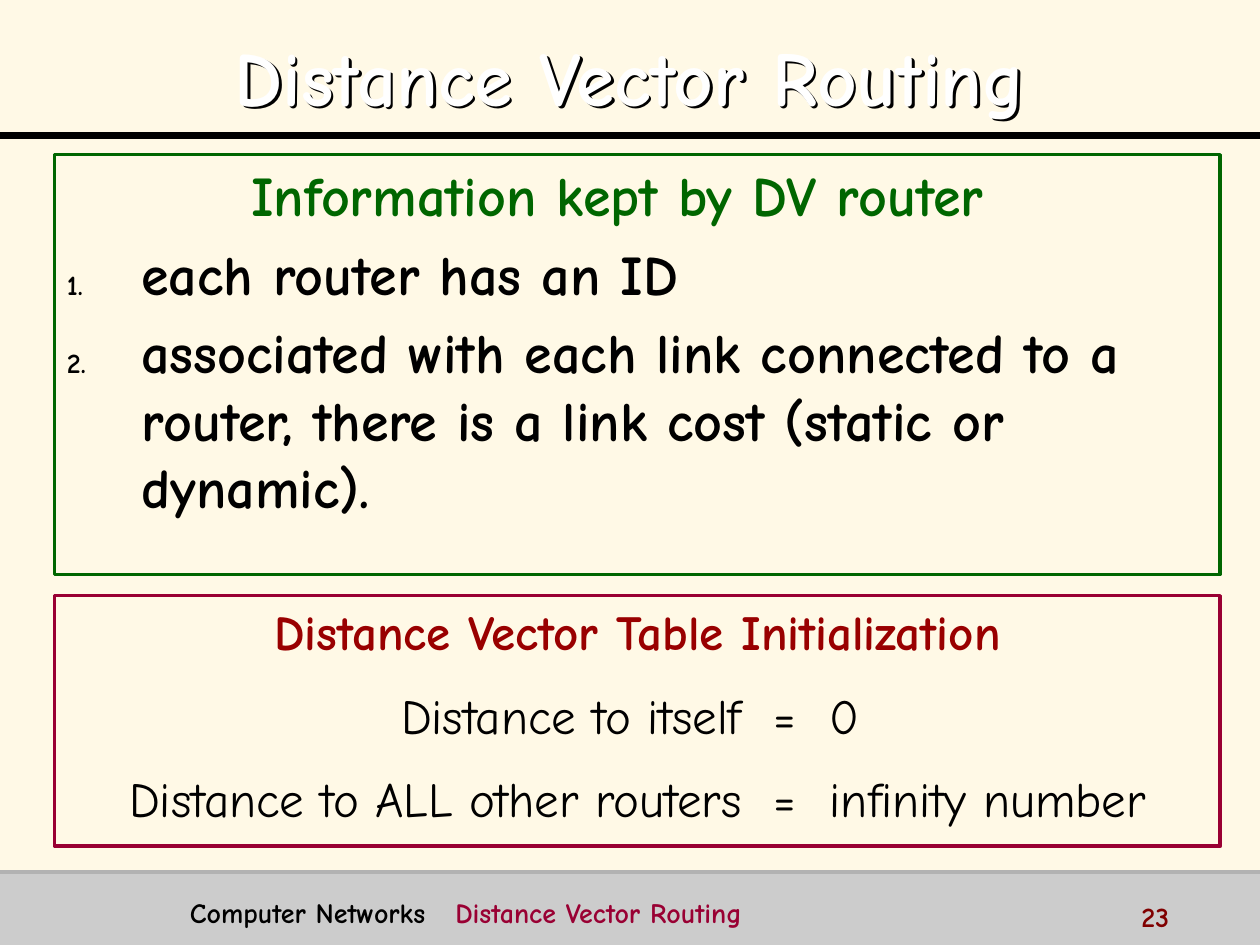
from lxml.etree import SubElement
from pptx import Presentation
from pptx.dml.color import RGBColor
from pptx.enum.shapes import MSO_CONNECTOR as Connector, MSO_SHAPE as Shape
from pptx.enum.text import MSO_ANCHOR as Anchor, PP_ALIGN as Align
from pptx.oxml.ns import qn
from pptx.util import Cm, Pt

FONT = "Comic Neue"
CREAM = RGBColor(0xFF, 0xF9, 0xE6)
WHITE = RGBColor(0xFF, 0xFF, 0xFF)
BLACK = RGBColor(0, 0, 0)
LIGHT_GREY = RGBColor(0xCC, 0xCC, 0xCC)
GREY = RGBColor(0xB2, 0xB2, 0xB2)
GREEN = RGBColor(0, 0x66, 0)
CRIMSON = RGBColor(0x99, 0, 0x33)
RED = RGBColor(0x99, 0, 0)
MAROON = RGBColor(0x80, 0, 0)

PAGE_WIDTH, PAGE_HEIGHT = Cm(25.4), Cm(19.05)
FOOTER_TOP = Cm(17.58)
PANEL_LEFT, PANEL_WIDTH = Cm(1.1), Cm(23.5)
INDENT = Cm(1.5)


def add_rule(page, top, color, width):
    rule = page.shapes.add_connector(Connector.STRAIGHT, 0, top, PAGE_WIDTH, top)
    rule.line.color.rgb = color
    rule.line.width = Pt(width)
    SubElement(rule._element.spPr, qn("a:effectLst"))


def add_rectangle(page, left, top, width, height, fill=None, outline=None):
    box = page.shapes.add_shape(Shape.RECTANGLE, left, top, width, height)
    box.shadow.inherit = False
    if fill is None:
        box.fill.background()
    else:
        box.fill.solid()
        box.fill.fore_color.rgb = fill
    if outline is None:
        box.line.fill.background()
    else:
        box.line.color.rgb = outline
        box.line.width = Pt(2)
    box.text_frame.word_wrap = True
    box.text_frame.vertical_anchor = Anchor.TOP
    return box


def add_text_box(page, left, top, width, height):
    box = page.shapes.add_textbox(left, top, width, height)
    box.text_frame.word_wrap = True
    return box


def set_tabs(para, stops):
    tab_list = SubElement(para._p.get_or_add_pPr(), qn("a:tabLst"))
    for position, align in stops:
        SubElement(tab_list, qn("a:tab"), pos=str(position), algn=align)


def set_number(para):
    properties = para._p.get_or_add_pPr()
    properties.set("marL", str(INDENT))
    properties.set("indent", str(-INDENT))
    color = SubElement(properties, qn("a:buClr"))
    SubElement(color, qn("a:srgbClr"), val=str(BLACK))
    SubElement(properties, qn("a:buSzPct"), val="50000")
    SubElement(properties, qn("a:buFont"), typeface=FONT)
    SubElement(properties, qn("a:buAutoNum"), type="arabicPeriod")


def set_font(para, size, color, bold=True):
    para.font.name = FONT
    para.font.size = Pt(size)
    para.font.bold = bold
    para.font.color.rgb = color


def write_first(box, text, size, color, align=Align.LEFT):
    para = box.text_frame.paragraphs[0]
    para.text = text
    para.alignment = align
    set_font(para, size, color)
    return para


def add_title(page):
    # Black shadow text, then the white title over it
    for offset, color in ((Cm(0.05), BLACK), (0, WHITE)):
        box = add_text_box(page, Cm(0.5) + offset, Cm(0.33) + offset, Cm(24.4), Cm(2.2))
        box.text_frame.vertical_anchor = Anchor.MIDDLE
        para = write_first(box, "Distance Vector Routing", 44, color, Align.CENTER)
        para.line_spacing = 1.1


def add_information_panel(page):
    box = add_rectangle(page, PANEL_LEFT, Cm(3.12), PANEL_WIDTH, Cm(8.46), outline=GREEN)
    heading = write_first(box, "Information kept by DV router", 32, GREEN, Align.CENTER)
    heading._p.get_or_add_pPr().set("marR", str(Cm(0.8)))
    for text in (
        "each router has an ID",
        "associated with each link connected to a router, "
        "there is a link cost (static or dynamic).",
    ):
        para = box.text_frame.add_paragraph()
        para.text = text
        para.alignment = Align.LEFT
        set_number(para)
        para.space_before = Pt(6.4)
        set_font(para, 32, BLACK)


def add_initialization_panel(page):
    box = add_rectangle(page, PANEL_LEFT, Cm(12.01), PANEL_WIDTH, Cm(5.05), outline=CRIMSON)
    write_first(box, "Distance Vector Table Initialization", 28, RED, Align.CENTER)
    # Both equations line up on the equals sign
    stops = (Cm(13.6), "r"), (Cm(14.47), "ctr"), (Cm(15.38), "l")
    for target, value in (
        ("Distance to itself", "0"),
        ("Distance to ALL other routers", "infinity number"),
    ):
        para = box.text_frame.add_paragraph()
        para.text = f"\t{target}\t=\t{value}"
        para.alignment = Align.LEFT
        set_tabs(para, stops)
        para.space_before = Pt(14)
        set_font(para, 28, BLACK, bold=False)


def add_footer(page):
    box = add_text_box(page, Cm(3.58), Cm(17.93), Cm(18.5), Cm(0.8))
    para = box.text_frame.paragraphs[0]
    set_tabs(para, [(Cm(5.35), "l")])
    set_font(para, 16, BLACK)
    for text, color in (("Computer Networks\t", BLACK), ("Distance Vector Routing", CRIMSON)):
        span = para.add_run()
        span.text = text
        span.font.color.rgb = color
    number = add_text_box(page, Cm(22.76), Cm(18.01), Cm(2.54), Cm(0.64))
    write_first(number, "23", 16, MAROON)


def main():
    deck = Presentation()
    deck.slide_width, deck.slide_height = PAGE_WIDTH, PAGE_HEIGHT
    page = deck.slides.add_slide(deck.slide_layouts[6])
    page.background.fill.solid()
    page.background.fill.fore_color.rgb = CREAM

    # Footer band and rules
    add_rectangle(page, 0, FOOTER_TOP, PAGE_WIDTH, PAGE_HEIGHT - FOOTER_TOP, fill=LIGHT_GREY)
    add_rule(page, Cm(2.74), BLACK, 4)
    add_rule(page, FOOTER_TOP, GREY, 2)

    # Text
    add_title(page)
    add_footer(page)
    add_information_panel(page)
    add_initialization_panel(page)
    deck.save("out.pptx")


if __name__ == "__main__":
    main()
